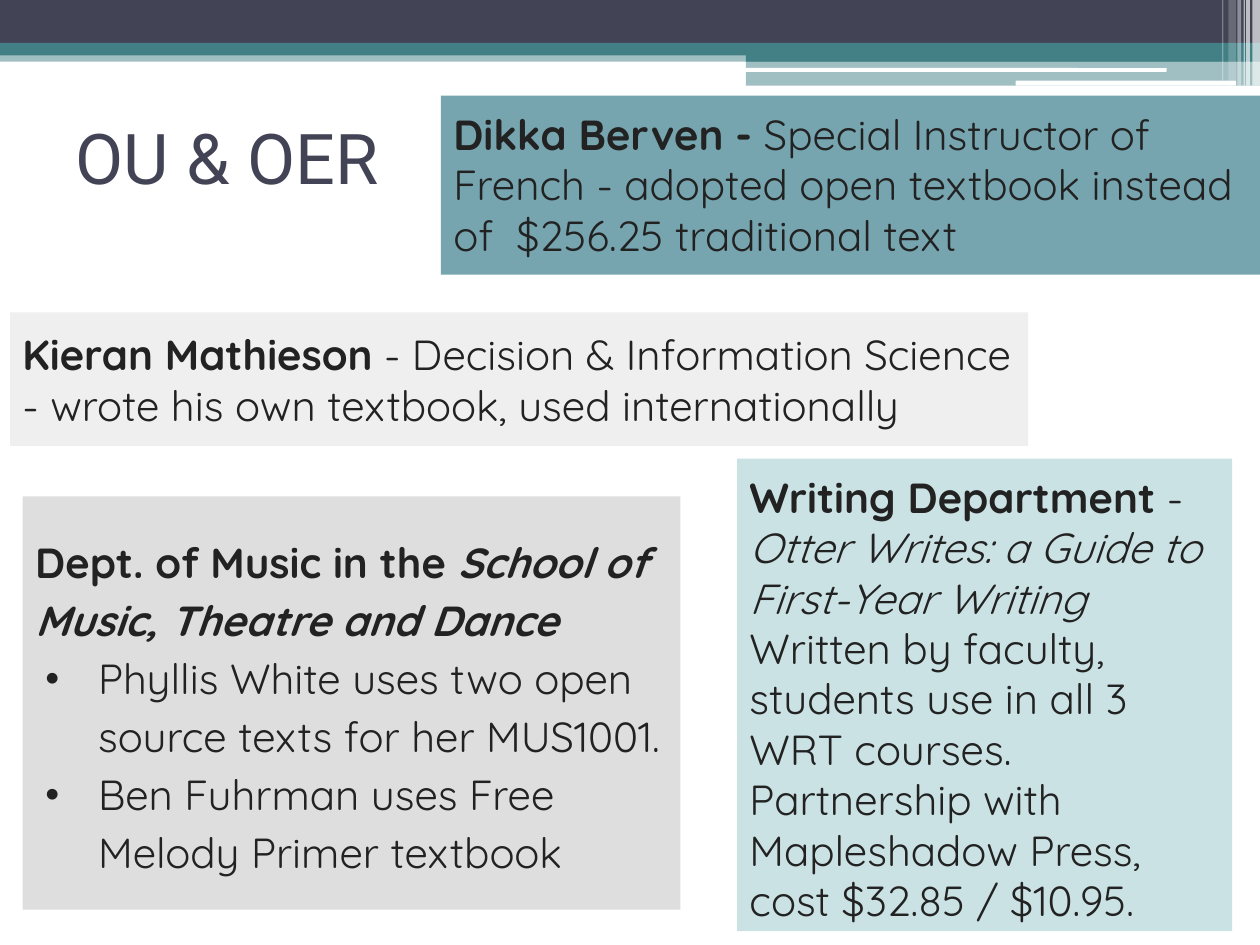
from dataclasses import dataclass

from lxml.etree import SubElement
from pptx import Presentation
from pptx.dml.color import RGBColor
from pptx.enum.shapes import MSO_SHAPE as Preset
from pptx.enum.text import MSO_ANCHOR as Anchor, PP_ALIGN as Align
from pptx.oxml.ns import qn
from pptx.shapes.autoshape import Shape
from pptx.slide import Slide
from pptx.util import Inches, Pt

WHITE = RGBColor(0xFF, 0xFF, 0xFF)
NAVY = RGBColor(0x42, 0x44, 0x56)
TEAL = RGBColor(0x43, 0x80, 0x86)
INK = RGBColor(0x22, 0x22, 0x22)
STEEL_BLUE = RGBColor(0x76, 0xA5, 0xAF)
DEEP_TEAL = RGBColor(0x32, 0x8D, 0x96)
GREY = RGBColor(0xDE, 0xDE, 0xDE)
PALE_GREY = RGBColor(0xEF, 0xEF, 0xEF)
BODY_FONT = "Quicksand"

Box = tuple[float, float, float, float]


@dataclass
class Band:
    box: Box
    color: RGBColor
    opacity: int = 100
    rounded: bool = False


@dataclass
class Phrase:
    text: str
    bold: bool = False
    italic: bool = False
    break_after: bool = False


@dataclass
class Entry:
    phrases: list[Phrase]
    bulleted: bool = False


@dataclass
class Card:
    band: Band
    entries: list[Entry]
    anchor: Anchor = Anchor.MIDDLE
    space_before: int = 0
    space_after: int = 0
    line_spacing: float = 1.0


STRIPES = [
    Band((left, 0, width, height), WHITE, opacity)
    for left, width, height, opacity in [
        (9.94, 0.06, 0.68, 65), (9.89, 0.03, 0.68, 65), (9.87, 0.01, 0.68, 60),
        (9.82, 0.03, 0.68, 40), (9.75, 0.06, 0.64, 20), (9.7, 0.01, 0.64, 30),
    ]
]

HEADER = [
    Band((0, 0.4, 10, 0.09), TEAL, 50),
    Band((0, 0, 10, 0.34), NAVY),
    Band((0, 0.34, 10, 0.1), TEAL),
    Band((5.92, 0.39, 4.08, 0.1), TEAL),
    Band((5.92, 0.48, 4.08, 0.2), TEAL, 50),
    Band((5.91, 0.54, 3.35, 0.03), WHITE, rounded=True),
    Band((8.06, 0.64, 1.75, 0.04), WHITE, rounded=True),
    *STRIPES,
]

CARDS = [
    Card(
        Band((3.5, 0.76, 6.5, 1.42), STEEL_BLUE),
        [Entry([
            Phrase("Dikka Berven - ", bold=True),
            Phrase("Special Instructor of French - adopted open textbook "
                   "instead of  $256.25 traditional text"),
        ])],
        anchor=Anchor.TOP, space_before=4, space_after=4,
    ),
    Card(
        Band((5.85, 3.64, 3.93, 3.75), DEEP_TEAL, 25),
        [Entry([
            Phrase("Writing Department", bold=True),
            Phrase(" - "),
            Phrase("Otter Writes: a Guide to First-Year Writing", italic=True, break_after=True),
            Phrase("Written by faculty, students use in all 3 WRT courses. "
                   "Partnership with Mapleshadow Press, cost $32.85 / $10.95."),
        ])],
        anchor=Anchor.TOP, space_before=3,
    ),
    Card(
        Band((0.18, 3.94, 5.22, 3.28), GREY),
        [
            Entry([
                Phrase("Dept. of Music in the ", bold=True),
                Phrase("School of Music, Theatre and Dance", bold=True, italic=True),
            ]),
            Entry([Phrase("Phyllis White uses two open source texts for her MUS1001.")], bulleted=True),
            Entry([Phrase("Ben Fuhrman uses Free Melody Primer textbook")], bulleted=True),
        ],
        line_spacing=1.15,
    ),
    Card(
        Band((0.08, 2.48, 8.08, 1.06), PALE_GREY),
        [Entry([
            Phrase("Kieran Mathieson", bold=True),
            Phrase(" - Decision & Information Science - wrote his own textbook, used internationally"),
        ])],
        space_before=3,
    ),
]


def draw_band(slide: Slide, band: Band) -> Shape:
    preset = Preset.ROUNDED_RECTANGLE if band.rounded else Preset.RECTANGLE
    shape = slide.shapes.add_shape(preset, *map(Inches, band.box))
    shape.shadow.inherit = False
    shape.line.fill.background()
    shape.fill.solid()
    shape.fill.fore_color.rgb = band.color
    if band.opacity < 100:
        color = shape.fill._xPr.find(qn("a:solidFill"))[0]
        SubElement(color, qn("a:alpha"), val=str(band.opacity * 1000))
    return shape


def set_frame(shape: Shape, anchor: Anchor) -> None:
    frame = shape.text_frame
    frame.word_wrap = True
    frame.vertical_anchor = anchor
    frame.margin_left = frame.margin_right = Inches(0.1)
    frame.margin_top = frame.margin_bottom = Inches(0.1)


def add_bullet(paragraph) -> None:
    properties = paragraph._p.get_or_add_pPr()
    properties.set("marL", str(Inches(0.5)))
    properties.set("indent", str(Inches(-0.42)))
    SubElement(properties, qn("a:buFont"), typeface=BODY_FONT)
    SubElement(properties, qn("a:buChar"), char="•")


def draw_card(slide: Slide, card: Card) -> None:
    shape = draw_band(slide, card.band)
    set_frame(shape, card.anchor)
    frame = shape.text_frame
    for index, entry in enumerate(card.entries):
        paragraph = frame.add_paragraph() if index else frame.paragraphs[0]
        paragraph.alignment = Align.LEFT
        paragraph.space_before = Pt(card.space_before)
        paragraph.space_after = Pt(card.space_after)
        paragraph.line_spacing = card.line_spacing
        if entry.bulleted:
            add_bullet(paragraph)
        paragraph.font.name = BODY_FONT
        paragraph.font.size = Pt(24)
        paragraph.font.color.rgb = INK
        for phrase in entry.phrases:
            run = paragraph.add_run()
            run.text = phrase.text
            run.font.bold = phrase.bold
            run.font.italic = phrase.italic
            if phrase.break_after:
                paragraph.add_line_break()


def draw_title(slide: Slide, text: str) -> None:
    title = slide.shapes.title
    title.left, title.top, title.width, title.height = map(Inches, (0.5, 0.66, 9, 1.17))
    set_frame(title, Anchor.MIDDLE)
    title.text_frame.text = text
    heading = title.text_frame.paragraphs[0]
    heading.alignment = Align.LEFT
    heading.font.name = "Roboto"
    heading.font.size = Pt(40)
    heading.font.color.rgb = NAVY


def main() -> None:
    """Build the slide on open textbooks at the university and save it."""
    deck = Presentation()
    deck.slide_width, deck.slide_height = Inches(10), Inches(7.5)
    slide = deck.slides.add_slide(deck.slide_layouts[5])
    draw_title(slide, "OU & OER")
    for band in HEADER:
        draw_band(slide, band)
    for card in CARDS:
        draw_card(slide, card)
    deck.save("out.pptx")


if __name__ == "__main__":
    main()
